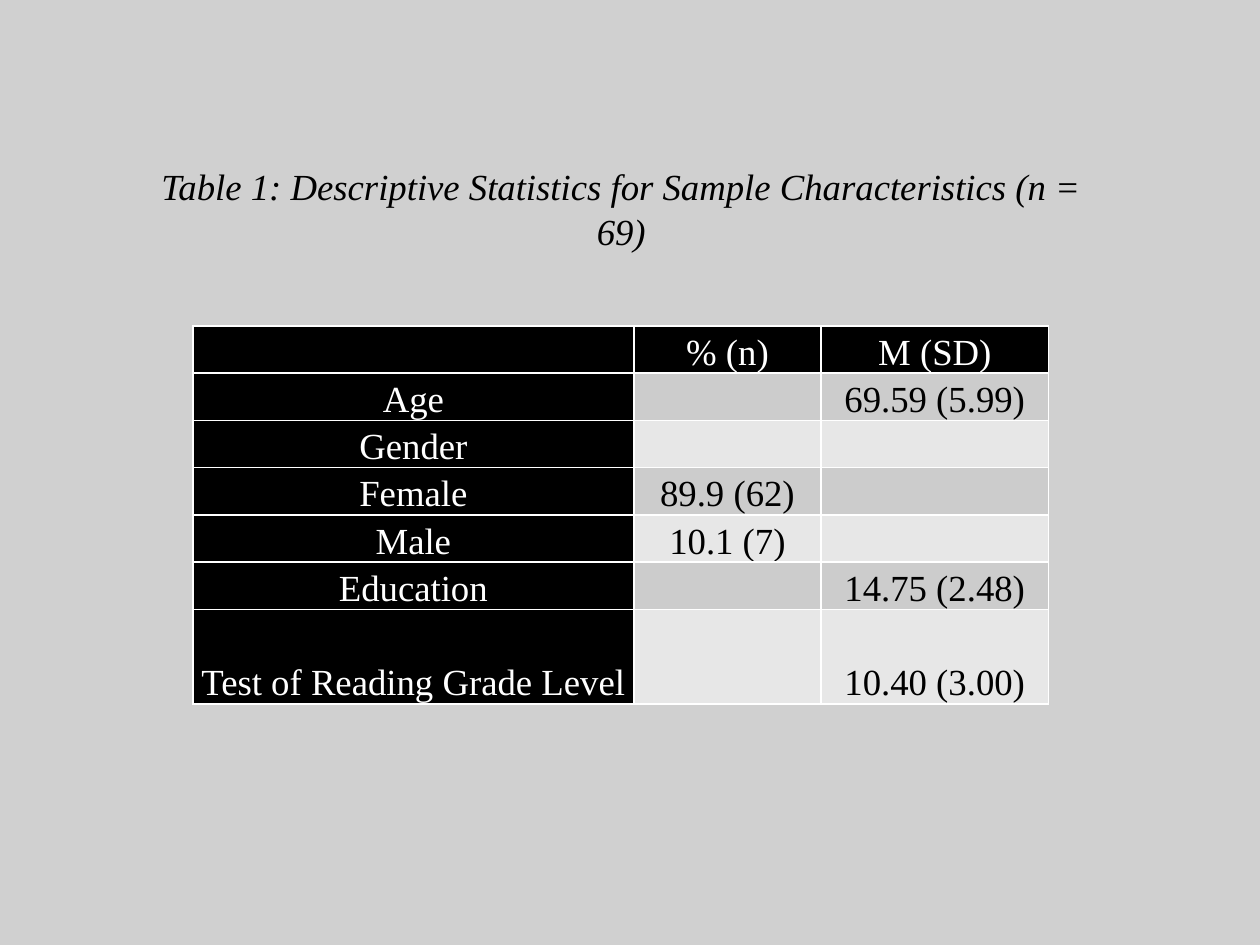
from lxml import etree
from pptx import Presentation
from pptx.dml.color import RGBColor
from pptx.enum import text as t
from pptx.oxml import ns
from pptx.util import Pt

# Content
TITLE = "Table 1: Descriptive Statistics for Sample Characteristics (n = 69)"
ROWS = [
    ("", "% (n)", "M (SD)"),
    ("Age", "", "69.59 (5.99)"),
    ("Gender", "", ""),
    ("Female", "89.9 (62)", ""),
    ("Male", "10.1 (7)", ""),
    ("Education", "", "14.75 (2.48)"),
    ("Test of Reading Grade Level", "", "10.40 (3.00)"),
]
WIDTHS = (252, 107, 130)
HEIGHTS = [27] * 6 + [54]
BANDS = ("E7E7E7", "CCCCCC")
BLACK, WHITE, GREY = "000000", "FFFFFF", "D0D0D0"


def color(code):
    return RGBColor.from_string(code)


def paint(fill, code):
    fill.solid()
    fill.fore_color.rgb = color(code)


def put(obj, **values):
    for name, value in values.items():
        setattr(obj, name, value)


def write(par, words, code, italic=False):
    par.alignment = t.PP_ALIGN.CENTER
    run = par.add_run()
    run.text = words
    put(run.font, name="Times New Roman", size=Pt(21), bold=False, italic=italic)
    run.font.color.rgb = color(code)


def border(cell, code, width):
    props = cell._tc.get_or_add_tcPr()
    for spot, side in enumerate("LRTB"):
        line = etree.Element(ns.qn(f"a:ln{side}"), w=str(Pt(width)))
        fill = etree.SubElement(line, ns.qn("a:solidFill"))
        etree.SubElement(fill, ns.qn("a:srgbClr"), val=code)
        props.insert(spot, line)


# Slide
deck = Presentation()
put(deck, slide_width=Pt(720), slide_height=Pt(540))
slide = deck.slides.add_slide(deck.slide_layouts[5])
paint(slide.background.fill, GREY)

# Title, raised by a deep bottom inset
title = slide.shapes.title
put(title, left=Pt(78), top=Pt(103), width=Pt(554), height=Pt(56))
frame = title.text_frame
put(frame, word_wrap=True, auto_size=t.MSO_AUTO_SIZE.NONE,
    vertical_anchor=t.MSO_ANCHOR.MIDDLE, margin_left=Pt(5), margin_right=Pt(5),
    margin_top=Pt(3), margin_bottom=Pt(27))
write(frame.paragraphs[0], TITLE, BLACK, italic=True)

# Table
table = slide.shapes.add_table(
    len(ROWS), len(WIDTHS), Pt(110.2), Pt(186.3),
    Pt(sum(WIDTHS)), Pt(sum(HEIGHTS))).table
for col, width in zip(table.columns, WIDTHS):
    col.width = Pt(width)
for row, height in zip(table.rows, HEIGHTS):
    row.height = Pt(height)

for r, row in enumerate(ROWS):
    for c, words in enumerate(row):
        cell = table.cell(r, c)
        head = r == 0 or c == 0
        put(cell, vertical_anchor=t.MSO_ANCHOR.BOTTOM, margin_left=Pt(4.5),
            margin_right=Pt(4.5), margin_top=0, margin_bottom=0)
        paint(cell.fill, BLACK if head else BANDS[r % 2])
        border(cell, WHITE, 1)
        if words:
            par = cell.text_frame.paragraphs[0]
            par.line_spacing = 1.07
            write(par, words, WHITE if head else BLACK)

deck.save("out.pptx")
